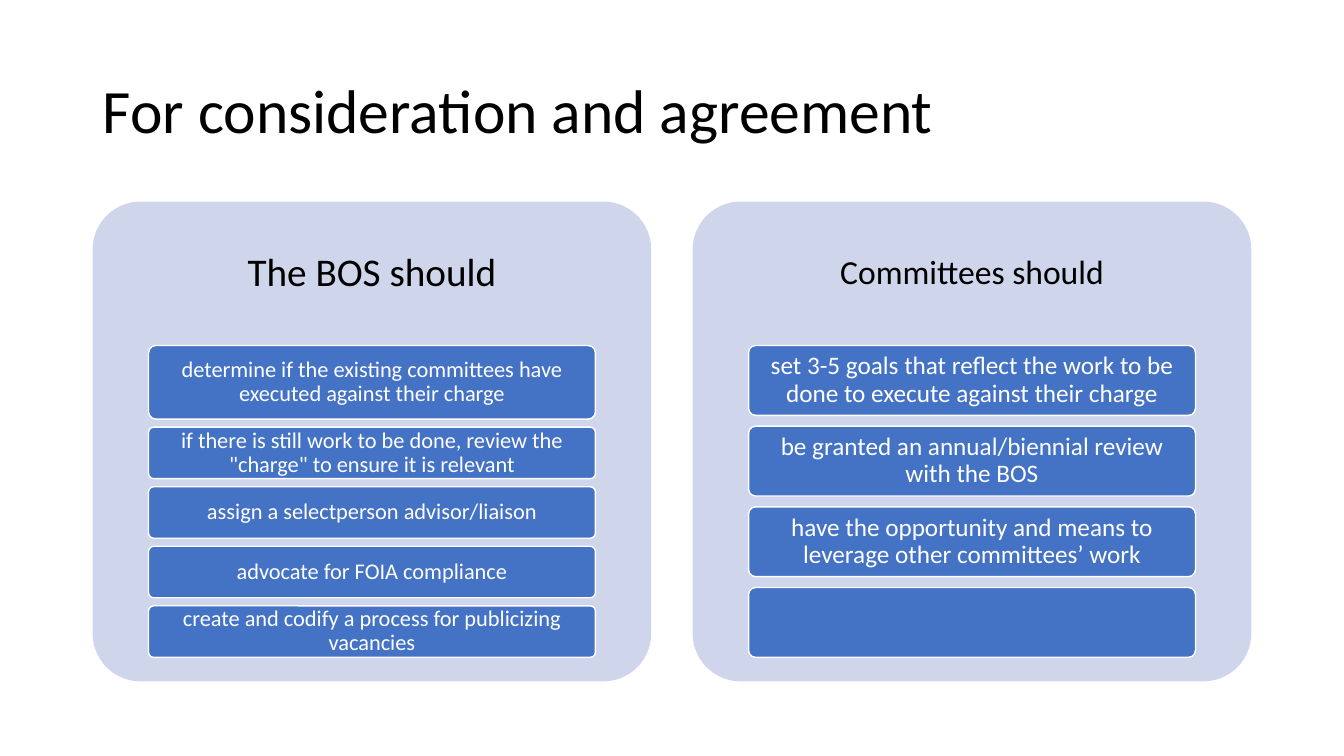
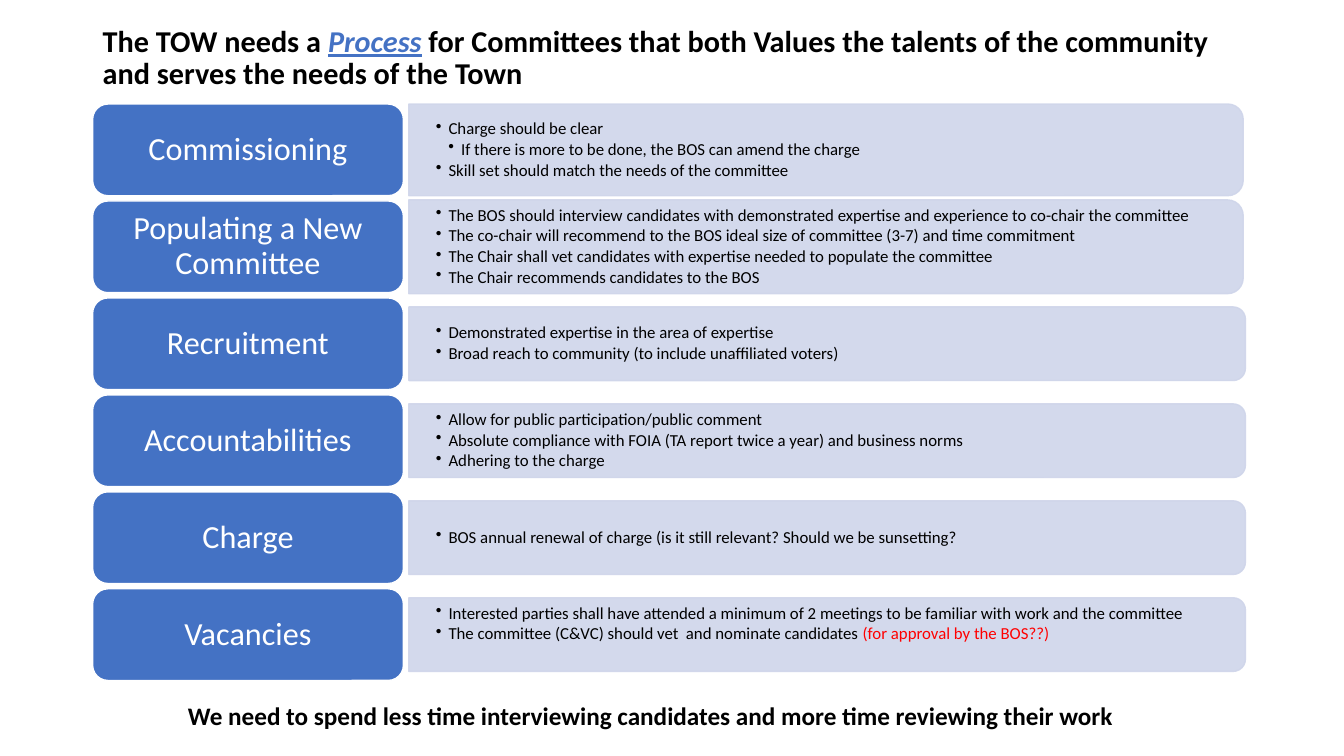
import pptx
import pptx.dml.color
import pptx.enum.shapes
import pptx.enum.text
import pptx.oxml.ns
import pptx.util
from lxml import etree

Pt = pptx.util.Pt
RGBColor = pptx.dml.color.RGBColor
Shape = pptx.enum.shapes.MSO_SHAPE
Align = pptx.enum.text.PP_ALIGN
Anchor = pptx.enum.text.MSO_ANCHOR
qn = pptx.oxml.ns.qn

BLUE = RGBColor(0x44, 0x72, 0xC4)
PALE = RGBColor(0xCF, 0xD5, 0xEA)
WHITE = RGBColor(0xFF, 0xFF, 0xFF)
BLACK = RGBColor(0x00, 0x00, 0x00)
RED = RGBColor(0xFF, 0x00, 0x00)
FONT = "Calibri"
TITLE_ONLY = 5
LEFT = 66.2

PANELS = [
    ("The BOS should", 28, 16, [
        ("determine if the existing committees have executed against their charge", 52.6),
        ("if there is still work to be done, review the \"charge\" to ensure it is relevant", 36.8),
        ("assign a selectperson advisor/liaison", 36.8),
        ("advocate for FOIA compliance", 36.8),
        ("create and codify a process for publicizing vacancies", 36.8),
    ]),
    ("Committees should", 24, 18, [
        ("set 3-5 goals that reflect the work to be done to execute against their charge", 49.9),
        ("be granted an annual/biennial review with the BOS", 49.9),
        ("have the opportunity and means to leverage other committees’ work", 49.9),
        ("", 49.9),
    ]),
]

# Each row: label, body width, body height, space below the list, list of (level, runs)
PROCESS_ROWS = [
    ("Commissioning", 596, 65.5, 0, [
        (1, ["Charge should be clear"]),
        (2, ["If there is more to be done, the BOS can amend the charge"]),
        (1, ["Skill set should match the needs of the committee"]),
    ]),
    ("Populating a New Committee", 596, 67, 0, [
        (1, ["The BOS should interview candidates with demonstrated expertise and experience "
             "to co-chair the committee"]),
        (1, ["The co-chair will recommend to the BOS ideal size of committee (3-7) "
             "and time commitment"]),
        (1, ["The Chair shall vet candidates with expertise needed to populate the committee"]),
        (1, ["The Chair recommends candidates to the BOS"]),
    ]),
    ("Recruitment", 597.6, 52.6, 0, [
        (1, ["Demonstrated expertise in the area of expertise"]),
        (1, ["Broad reach to community (to include unaffiliated voters)"]),
    ]),
    ("Accountabilities", 597.6, 52.6, 0, [
        (1, ["Allow for public participation/public comment"]),
        (1, ["Absolute compliance with FOIA (TA report twice a year) and business norms"]),
        (1, ["Adhering to the charge"]),
    ]),
    ("Charge", 597.6, 52.6, 0, [
        (1, ["BOS annual renewal of charge (is it still relevant? Should we be sunsetting?"]),
    ]),
    ("Vacancies", 597.6, 52.6, 15, [
        (1, ["Interested parties shall have attended a minimum of 2 meetings to be familiar "
             "with work and the committee"]),
        (1, ["The committee (C&VC) should vet  and nominate candidates ",
             "(for approval by the BOS??)"]),
    ]),
]


def format_run(run, size, color, bold=False):
    run.font.name = FONT
    run.font.size = Pt(size)
    run.font.color.rgb = color
    run.font.bold = bold


def set_frame(text_frame, horizontal=7.2, top=3.6, bottom=3.6):
    text_frame.word_wrap = True
    text_frame.auto_size = pptx.enum.text.MSO_AUTO_SIZE.NONE
    text_frame.vertical_anchor = Anchor.MIDDLE
    text_frame.margin_left = text_frame.margin_right = Pt(horizontal)
    text_frame.margin_top, text_frame.margin_bottom = Pt(top), Pt(bottom)


def add_runs(paragraph, texts, size, color, bold=False, spacing=0.9):
    paragraph.line_spacing = spacing
    for text in texts:
        run = paragraph.add_run()
        run.text = text
        format_run(run, size, color, bold)


def add_block(slide, kind, left, top, width, height, fill, line=None):
    shape = slide.shapes.add_shape(kind, Pt(left), Pt(top), Pt(width), Pt(height))
    shape.shadow.inherit = False
    shape.fill.solid()
    shape.fill.fore_color.rgb = fill
    if line is None:
        shape.line.fill.background()
    else:
        shape.line.color.rgb = line
        shape.line.width = Pt(1)
    return shape


def add_label(shape, text, size, color):
    """Write one centred paragraph inside a block."""
    paragraph = shape.text_frame.paragraphs[0]
    paragraph.alignment = Align.CENTER
    add_runs(paragraph, [text], size, color)


def add_title_slide(presentation, texts, top, height, size, bold=False):
    """Add a slide with a left-aligned title and return it with the title's runs."""
    slide = presentation.slides.add_slide(presentation.slide_layouts[TITLE_ONLY])
    title = slide.shapes.title
    title.left, title.top, title.width, title.height = Pt(LEFT), Pt(top), Pt(828), Pt(height)
    set_frame(title.text_frame, top=0, bottom=0)
    paragraph = title.text_frame.paragraphs[0]
    paragraph.alignment = Align.LEFT
    add_runs(paragraph, texts, size, BLACK, bold)
    return slide, paragraph.runs


def add_panel(slide, left, top, width, height, heading, heading_size, item_size, items):
    """Heading in the top 30 %, items spread evenly over the next 65 %."""
    panel = add_block(slide, Shape.ROUNDED_RECTANGLE, left, top, width, height, PALE)
    panel.adjustments[0] = 0.1
    set_frame(panel.text_frame, top=0, bottom=height * 0.7)
    add_label(panel, heading, heading_size, BLACK)

    free = height * 0.65 - sum(item_height for _, item_height in items)
    gap = free / (len(items) - 1)
    item_top = top + height * 0.3
    for text, item_height in items:
        item = add_block(slide, Shape.ROUNDED_RECTANGLE, left + width * 0.1, item_top,
                         width * 0.8, item_height, BLUE, WHITE)
        item.adjustments[0] = 0.1
        set_frame(item.text_frame, horizontal=item_size / 5, top=2, bottom=2)
        if text:
            add_label(item, text, item_size, WHITE)
        item_top += item_height + gap


def set_bullet(paragraph, level):
    properties = paragraph._p.get_or_add_pPr()
    properties.set("marL", str(Pt(9 * level)))
    properties.set("indent", str(Pt(-9)))
    etree.SubElement(properties, qn("a:buChar")).set("char", "•")


def add_process_row(slide, left, top, height, label, body_width, body_height, below, bullets):
    """Blue label with a pale body, rounded at its right end, centred beside it."""
    label_width, body_left = 222, left + 225.8
    middle = top + height / 2
    body = add_block(slide, Shape.ROUND_2_SAME_RECTANGLE,
                     body_left + (body_width - body_height) / 2, middle - body_width / 2,
                     body_height, body_width, PALE, PALE)
    body.rotation = 90
    for color in body._element.spPr.iter(qn("a:srgbClr")):
        etree.SubElement(color, qn("a:alpha")).set("val", "90000")

    text_box = slide.shapes.add_textbox(Pt(body_left), Pt(middle - body_height / 2),
                                        Pt(body_width), Pt(body_height))
    text_frame = text_box.text_frame
    set_frame(text_frame, horizontal=19.4, top=0, bottom=below)
    for index, (level, texts) in enumerate(bullets):
        paragraph = text_frame.add_paragraph() if index else text_frame.paragraphs[0]
        add_runs(paragraph, texts, 12, BLACK)
        paragraph.space_after = Pt(1.8)
        set_bullet(paragraph, level)
        for run in paragraph.runs[1:]:
            run.font.color.rgb = RED

    tab = add_block(slide, Shape.ROUNDED_RECTANGLE, left, top, label_width, height, BLUE, WHITE)
    set_frame(tab.text_frame)
    add_label(tab, label, 23, WHITE)


def add_closing_line(slide, left, top, width, height, text):
    text_box = slide.shapes.add_textbox(Pt(left), Pt(top), Pt(width), Pt(height))
    set_frame(text_box.text_frame)
    paragraph = text_box.text_frame.paragraphs[0]
    paragraph.alignment = Align.CENTER
    add_runs(paragraph, [text], 18, BLACK, bold=True, spacing=1.0)


def build_agreement_slide(presentation):
    slide, _ = add_title_slide(presentation, ["For consideration and agreement"], 28.8, 104.4, 44)
    for index, panel in enumerate(PANELS):
        add_panel(slide, LEFT + 428.6 * index, 144, 399, 342.7, *panel)


def build_process_slide(presentation):
    texts = ["The TOW needs a ", "Process",
             " for Committees that both Values the talents of the community "
             "and serves the needs of the Town"]
    slide, runs = add_title_slide(presentation, texts, 18, 48, 21.6, bold=True)
    emphasis = runs[1].font
    emphasis.color.rgb = BLUE
    emphasis.italic = emphasis.underline = True
    for index, row in enumerate(PROCESS_ROWS):
        add_process_row(slide, LEFT, 74.3 + 69.25 * index, 65.5, *row)
    add_closing_line(slide, 20.2, 496.8, 889.2, 29,
                     "We need to spend less time interviewing candidates "
                     "and more time reviewing their work")


def main():
    presentation = pptx.Presentation()
    presentation.slide_width, presentation.slide_height = Pt(960), Pt(540)
    build_agreement_slide(presentation)
    build_process_slide(presentation)
    presentation.save("out.pptx")


if __name__ == "__main__":
    main()
